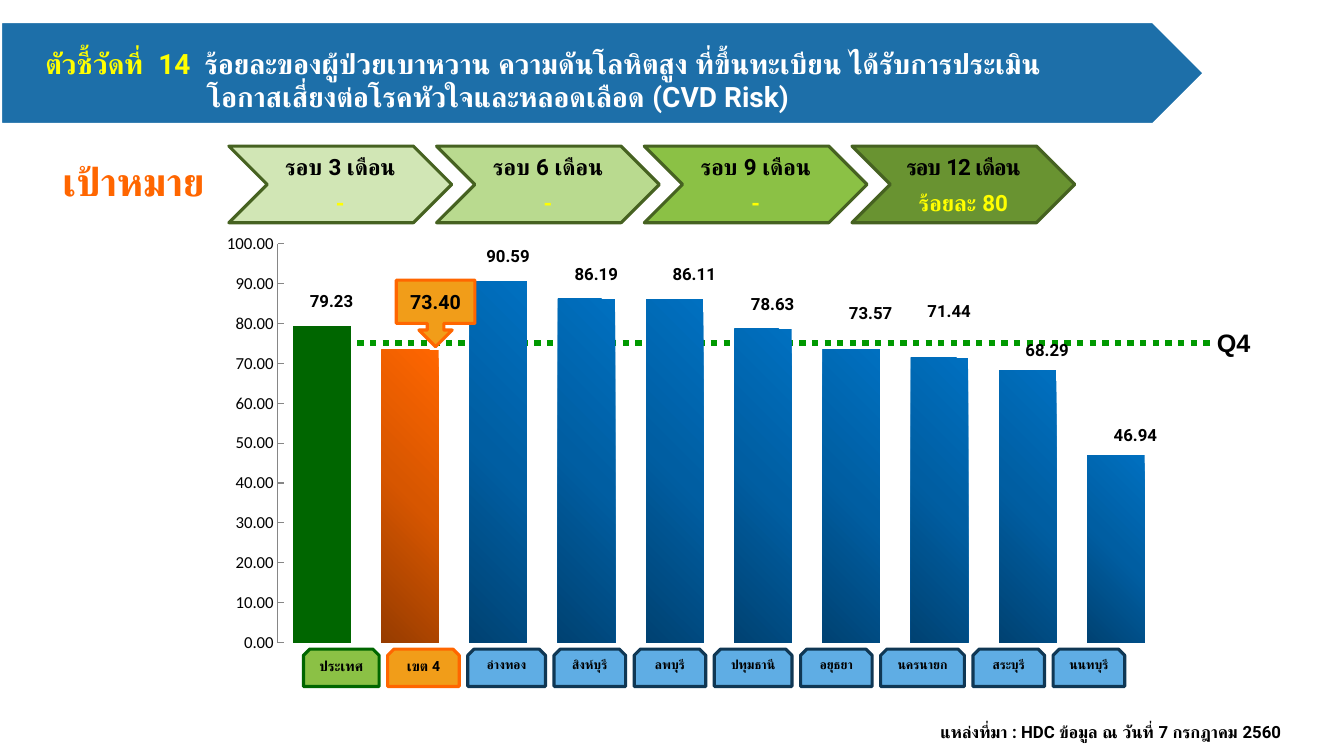
from itertools import accumulate

from pptx import Presentation
from pptx.chart.data import CategoryChartData
from pptx.dml.color import RGBColor
from pptx.enum.chart import XL_CHART_TYPE, XL_LABEL_POSITION, XL_TICK_MARK
from pptx.enum.dml import MSO_LINE
from pptx.enum.shapes import MSO_CONNECTOR, MSO_SHAPE
from pptx.enum.text import MSO_ANCHOR, PP_ALIGN
from pptx.oxml import parse_xml
from pptx.oxml.ns import nsdecls, qn
from pptx.util import Inches, Pt


class Theme:
    """Colours, fonts and type sizes of the slide."""
    font, axis_font, mark_font = "Roboto", "Calibri", "Arial"
    white, black, yellow, axis = "FFFFFF", "000000", "FFFF00", "868686"
    blue, sky, navy = "1D6FA9", "5FADE4", "0F3754"
    orange, amber, brown = "FF6600", "F19D19", "7D5008"
    green, lime, olive, dots = "006600", "8BC145", "466221", "009900"
    rounds = ("D1E6B5", "B9DA8F", "8BC145", "699331")
    orange_bar = ("973C00", "D75600", "FF6600")
    blue_bar = ("004272", "005EA2", "0070C0")
    headline, title, mark, step, callout, small, tag, province = 28, 20, 18, 16, 14, 12, 10, 9


ROUNDS = (("รอบ 3 เดือน", "-"), ("รอบ 6 เดือน", "-"),
          ("รอบ 9 เดือน", "-"), ("รอบ 12 เดือน", "ร้อยละ 80"))
AREAS = (("ประเทศ", 7.5), ("เขต 4", 7.1), ("อ่างทอง", 7.7), ("สิงห์บุรี", 7.1),
         ("ลพบุรี", 7.1), ("ปทุมธานี", 7.7), ("อยุธยา", 7.1), ("นครนายก", 8.3),
         ("สระบุรี", 7.1), ("นนทบุรี", 7.1))
VALUES = (79.29, 73.4, 90.59, 86.19, 86.11, 78.63, 73.57, 71.44, 68.29, 46.94)
LABEL_SHIFTS = ((0.01, -0.02), None, (0.01, -0.02), (0.01, -0.02), (0.02, -0.02),
                (0.01, -0.02), (0.02, -0.04), (0.01, -0.06), (0.02, -0.01), (0.02, -0.01))


def grid(*cells):
    """Turn columns and rows of a tenth of an inch into lengths."""
    return [Inches(cell / 10) for cell in cells]


def paint(target, color):
    """Give a fill a solid colour."""
    target.solid()
    target.fore_color.rgb = RGBColor.from_string(color)


def style_font(font, size, color, name=Theme.font, bold=True):
    """Set typeface, size, weight and colour."""
    font.name, font.size, font.bold = name, Pt(size), bold
    font.color.rgb = RGBColor.from_string(color)


def style_paragraph(paragraph, size, color, name=Theme.font, align=PP_ALIGN.CENTER):
    """Align a paragraph and set the type of its runs."""
    paragraph.alignment = align
    for run in paragraph.runs:
        style_font(run.font, size, color, name)


def add_box(slide, kind, area, fill, line, width=2.25, anchor=MSO_ANCHOR.MIDDLE):
    """Add an outlined preset shape and return its text frame."""
    shape = slide.shapes.add_shape(kind, *grid(*area))
    shape.shadow.inherit = False
    paint(shape.fill, fill)
    paint(shape.line.fill, line)
    shape.line.width = Pt(width)
    shape.text_frame.vertical_anchor = anchor
    return shape.text_frame


def add_label(slide, text, area, size, color, name=Theme.font, align=PP_ALIGN.LEFT):
    """Add a text box with one line and return its run."""
    frame = slide.shapes.add_textbox(*grid(*area)).text_frame
    frame.word_wrap = False
    frame.text = text
    style_paragraph(frame.paragraphs[0], size, color, name, align)
    return frame.paragraphs[0].runs[0]


def add_title(slide):
    """Add the banner with the indicator's name."""
    frame = add_box(slide, MSO_SHAPE.PENTAGON, (0.1, 2.2, 119.3, 10.1),
                    Theme.blue, Theme.white, 1.5)
    frame.margin_left, frame.margin_top = Inches(0.44), Inches(0.18)
    frame.text = ("ตัวชี้วัดที่\t14\tร้อยละของผู้ป่วยเบาหวาน ความดันโลหิตสูง ที่ขึ้นทะเบียน ได้รับการประเมิน\n"
                  "โอกาสเสี่ยงต่อโรคหัวใจและหลอดเลือด (CVD Risk)")
    first, second = frame.paragraphs
    stops = "".join(f'<a:tab pos="{Inches(stop)}" algn="l"/>' for stop in (1.12, 1.58))
    first._p.get_or_add_pPr().append(parse_xml(f'<a:tabLst {nsdecls("a")}>{stops}</a:tabLst>'))
    second._p.get_or_add_pPr().set("marL", str(Inches(1.6)))
    number, name = first.runs[0], first.add_run()
    head, digits, name.text = number.text.split("\t")
    number.text = f"{head}\t{digits}\t"
    for paragraph in frame.paragraphs:
        style_paragraph(paragraph, Theme.title, Theme.white, align=PP_ALIGN.LEFT)
    style_font(number.font, Theme.title, Theme.yellow)


def add_rounds(slide):
    """Add the chevrons with the target of each round."""
    for index, (lines, fill) in enumerate(zip(ROUNDS, Theme.rounds)):
        frame = add_box(slide, MSO_SHAPE.CHEVRON, (22.7 + 20.6 * index, 14.5, 22.1, 7.6),
                        fill, Theme.olive)
        frame.text = "\n".join(lines)
        for paragraph, color in zip(frame.paragraphs, (Theme.black, Theme.yellow)):
            style_paragraph(paragraph, Theme.step, color)
        frame.paragraphs[1].space_before = Pt(7)
    frame.paragraphs[0].runs[0].font._element.set("spc", "-80")


def add_tags(slide):
    """Add the area names under the bars."""
    starts = accumulate((width + 0.85 for _, width in AREAS), initial=30.1)
    styles = [(Theme.lime, Theme.green, Theme.tag), (Theme.amber, Theme.orange, Theme.tag)]
    styles += [(Theme.sky, Theme.navy, Theme.province)] * (len(AREAS) - 2)
    for (name, width), left, (fill, line, size) in zip(AREAS, starts, styles):
        frame = add_box(slide, MSO_SHAPE.SNIP_2_SAME_RECTANGLE, (left, 64.4, width, 3.7),
                        fill, line, anchor=MSO_ANCHOR.TOP)
        frame.text = name
        style_paragraph(frame.paragraphs[0], size, Theme.black)


def add_goal_line(slide):
    """Add the dotted line of the fourth quarter."""
    connector = slide.shapes.add_connector(MSO_CONNECTOR.STRAIGHT, *grid(29.2, 34, 120, 34))
    paint(connector.line.fill, Theme.dots)
    connector.line.width, connector.line.dash_style = Pt(4.5), MSO_LINE.ROUND_DOT
    connector._element.spPr.append(parse_xml(f'<a:effectLst {nsdecls("a")}/>'))


def manual_layout(places, extra=""):
    """Build a chart layout element from named shares."""
    body = extra + "".join(f'<c:{name} val="{share}"/>' for name, share in places)
    return parse_xml(f'<c:layout {nsdecls("c")}><c:manualLayout>{body}</c:manualLayout></c:layout>')


def shade_point(point, colors):
    """Fill a bar with a gradient from its lower left corner."""
    stops = "".join(f'<a:gs pos="{index * 50000}"><a:srgbClr val="{color}"/></a:gs>'
                    for index, color in enumerate(colors))
    point.format._element.get_or_add_spPr().insert(0, parse_xml(
        f'<a:gradFill {nsdecls("a")}><a:gsLst>{stops}</a:gsLst><a:path path="circle">'
        '<a:fillToRect t="100000" r="100000"/></a:path></a:gradFill>'))


def style_bars(series):
    """Colour the bars and place their values without leader lines."""
    paint(series.format.fill, Theme.blue)
    labels, first = series.data_labels, series.points[0]
    labels.show_value, labels.position = True, XL_LABEL_POSITION.OUTSIDE_END
    labels.number_format, labels.number_format_is_linked = "0.00", False
    style_font(labels.font, Theme.small, Theme.black)
    paint(first.format.fill, Theme.green)
    first.data_label.text_frame.text = "79.23"
    style_paragraph(first.data_label.text_frame.paragraphs[0], Theme.small, Theme.black)
    for index in range(1, len(VALUES)):
        shade_point(series.points[index], Theme.orange_bar if index == 1 else Theme.blue_bar)
        style_font(series.points[index].data_label.font, Theme.small, Theme.black)
    for label, shift in zip(labels._element.findall(qn("c:dLbl")), LABEL_SHIFTS):
        if shift:
            label.insert(1, manual_layout(zip("xy", shift)))
        else:
            label[1:] = [parse_xml(f'<c:delete {nsdecls("c")} val="1"/>')]
    for leader in labels._element.findall(qn("c:showLeaderLines")):
        labels._element.remove(leader)
    chart15 = 'xmlns:c15="http://schemas.microsoft.com/office/drawing/2012/chart"'
    labels._element.append(parse_xml(f'<c:showLeaderLines {nsdecls("c")} val="0"/>'))
    labels._element.append(parse_xml(
        f'<c:extLst {nsdecls("c")}><c:ext uri="{{CE6537A1-D6FC-4f65-9D91-7224C49458BB}}" {chart15}>'
        '<c15:showLeaderLines val="0"/></c:ext></c:extLst>'))


def add_bars(slide):
    """Add the column chart of all areas."""
    data = CategoryChartData(number_format="0.00")
    data.categories = [str(number + 1) for number in range(len(VALUES))]
    data.add_series("Series 1", VALUES)
    chart = slide.shapes.add_chart(XL_CHART_TYPE.COLUMN_CLUSTERED,
                                   *grid(20.1, 21.5, 96.8, 52.5), data).chart
    chart.has_title = chart.has_legend = chart.category_axis.visible = False
    style_font(chart.font, Theme.mark, Theme.black, Theme.axis_font, False)
    axis, plot, area = chart.value_axis, chart.plots[0], chart._chartSpace.chart.plotArea
    axis.minimum_scale, axis.maximum_scale, axis.major_unit = 0, 100, 10
    axis.has_major_gridlines, axis.major_tick_mark = False, XL_TICK_MARK.INSIDE
    axis.tick_labels.font.size = Pt(Theme.small)
    axis.tick_labels.number_format, axis.tick_labels.number_format_is_linked = "0.00", False
    paint(axis.format.line.fill, Theme.axis)
    plot.gap_width, plot.vary_by_categories = 54, False
    style_bars(plot.series[0])
    for layout in area.findall(qn("c:layout")):
        area.remove(layout)
    area.insert(0, manual_layout(
        zip("xywh", (0.077, 0.051, 0.904, 0.754)),
        '<c:layoutTarget val="inner"/><c:xMode val="edge"/><c:yMode val="edge"/>'))
    clear = f'<c:spPr {nsdecls("c", "a")}><a:noFill/><a:ln><a:noFill/></a:ln></c:spPr>'
    area.append(parse_xml(clear))
    chart._chartSpace.chart.addnext(parse_xml(clear))


def main():
    """Build the slide and save it."""
    presentation = Presentation()
    presentation.slide_width, presentation.slide_height = grid(133.3, 75)
    slide = presentation.slides.add_slide(presentation.slide_layouts[6])
    add_goal_line(slide)
    add_bars(slide)
    add_label(slide, "Q4", (119.7, 32, 5.7, 4), Theme.mark, Theme.black, Theme.mark_font)
    add_title(slide)
    target = add_label(slide, "เป้าหมาย", (4.1, 15.1, 18.3, 5.7), Theme.headline,
                       Theme.orange, align=PP_ALIGN.CENTER)
    target.font._element.insert(0, parse_xml(
        f'<a:ln {nsdecls("a")} w="{Pt(0.71)}"><a:solidFill>'
        f'<a:srgbClr val="{Theme.brown}"/></a:solidFill></a:ln>'))
    add_rounds(slide)
    add_label(slide, "แหล่งที่มา : HDC ข้อมูล ณ วันที่ 7 กรกฎาคม 2560", (92.3, 71.1, 40, 3),
              Theme.small, Theme.black)
    callout = add_box(slide, MSO_SHAPE.DOWN_ARROW_CALLOUT, (39.3, 27.8, 7.8, 6.6),
                      Theme.amber, Theme.orange)
    callout.text = "73.40"
    style_paragraph(callout.paragraphs[0], Theme.callout, Theme.black)
    add_tags(slide)
    presentation.save("out.pptx")


if __name__ == "__main__":
    main()
